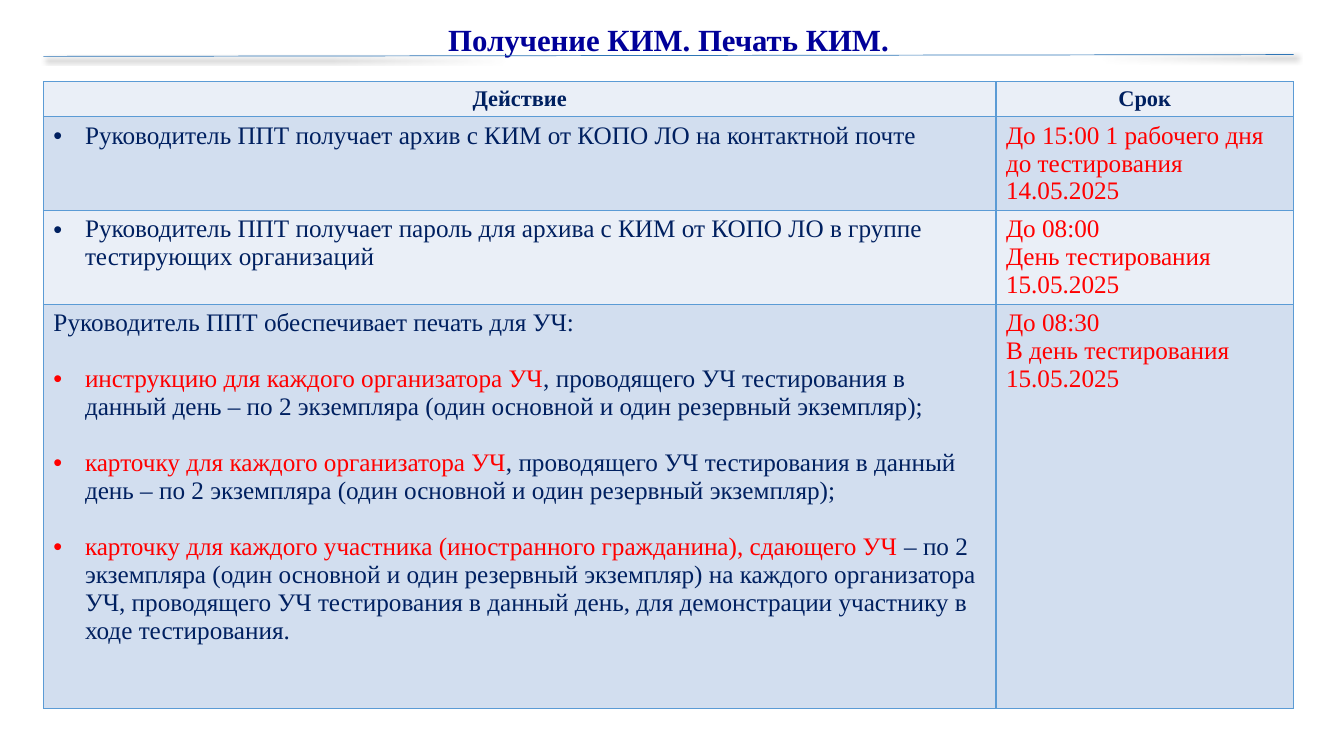
from lxml import etree
from pptx import Presentation
from pptx.dml.color import RGBColor
from pptx.enum.shapes import MSO_CONNECTOR
from pptx.enum.text import MSO_ANCHOR, MSO_AUTO_SIZE, PP_ALIGN
from pptx.oxml import parse_xml
from pptx.oxml.ns import nsdecls, qn
from pptx.util import Pt

CENTER, LEFT_ALIGN = PP_ALIGN.CENTER, PP_ALIGN.LEFT
TOP, MIDDLE, BOTTOM = MSO_ANCHOR.TOP, MSO_ANCHOR.MIDDLE, MSO_ANCHOR.BOTTOM
STRAIGHT, NO_AUTOFIT = MSO_CONNECTOR.STRAIGHT, MSO_AUTO_SIZE.NONE

FONT = "Times New Roman"
NAVY, RED, TITLE_BLUE = "002060", "FF0000", "000099"
BORDER, RULE = "5B9BD5", "2E75B6"
BANDS = ["EAEFF7", "D2DEEF"]

TITLE = "Получение КИМ. Печать КИМ."
HEADERS = ["Действие", "Срок"]
COPIES = (", проводящего УЧ тестирования в данный день – по 2 экземпляра "
          "(один основной и один резервный экземпляр);")
# Each paragraph: (bulleted, space before, [(text, colour), ...])
ACTIONS = [
    [(True, 0, [("Руководитель ППТ получает архив с КИМ от КОПО ЛО на контактной почте", NAVY)])],
    [(True, 0, [("Руководитель ППТ получает пароль для архива с КИМ от КОПО ЛО "
                 "в группе тестирующих организаций", NAVY)])],
    [(False, 0, [("Руководитель ППТ обеспечивает печать для УЧ:", NAVY)]),
     (True, 20, [("инструкцию для каждого организатора УЧ", RED), (COPIES, NAVY)]),
     (True, 20, [("карточку для каждого организатора УЧ", RED), (COPIES, NAVY)]),
     (True, 20, [("карточку для каждого участника (иностранного гражданина), сдающего УЧ ", RED),
                 ("– по 2 экземпляра (один основной и один резервный экземпляр) на каждого "
                  "организатора УЧ, проводящего УЧ тестирования в данный день, для "
                  "демонстрации участнику в ходе тестирования.", NAVY)])],
]
DEADLINES = [
    ["До 15:00 1 рабочего дня до тестирования", "14.05.2025"],
    ["До 08:00", "День тестирования", "15.05.2025"],
    ["До 08:30", "В день тестирования", "15.05.2025"],
]

LEFT, WIDTH = 31, 893
TABLE_TOP = 58.3
COLUMN_WIDTHS = [680.4, 212.6]
ROW_HEIGHTS = [25, 67, 67, 289]
INDENT = 22.5


def rgb(value):
    return RGBColor.from_string(value)


def style_run(r, size, color, bold=False):
    r.font.name, r.font.size, r.font.bold = FONT, Pt(size), bold
    r.font.color.rgb = rgb(color)


def add_bullet(p):
    pPr = p._p.get_or_add_pPr()
    pPr.set("marL", str(Pt(INDENT)))
    pPr.set("indent", str(-Pt(INDENT)))
    etree.SubElement(pPr, qn("a:buFont")).set("typeface", "Arial")
    etree.SubElement(pPr, qn("a:buChar")).set("char", "•")


def format_cell(cell, fill, anchor):
    """Set the borders, then the fill, which must follow them in the XML."""
    tcPr = cell._tc.get_or_add_tcPr()
    for side in ("lnL", "lnR", "lnT", "lnB"):
        tcPr.append(parse_xml(
            f'<a:{side} {nsdecls("a")} w="{Pt(1)}"><a:solidFill>'
            f'<a:srgbClr val="{BORDER}"/></a:solidFill></a:{side}>'))
    cell.fill.solid()
    cell.fill.fore_color.rgb = rgb(fill)
    cell.vertical_anchor = anchor


def fill_cell(cell, paragraphs, size, align=LEFT_ALIGN, bold=False):
    tf = cell.text_frame
    for i, (bulleted, before, runs) in enumerate(paragraphs):
        p = tf.add_paragraph() if i else tf.paragraphs[0]
        p.alignment = align
        p.space_before = Pt(before)
        if bulleted:
            add_bullet(p)
        for text, color in runs:
            r = p.add_run()
            r.text = text
            style_run(r, size, color, bold)


def add_title(s):
    title = s.shapes.title
    title.left, title.top, title.width, title.height = Pt(LEFT), Pt(0), Pt(WIDTH), Pt(45)
    tf = title.text_frame
    tf.text = TITLE
    tf.auto_size, tf.word_wrap, tf.vertical_anchor = NO_AUTOFIT, True, BOTTOM
    p = tf.paragraphs[0]
    p.alignment, p.line_spacing = CENTER, 0.9
    style_run(p.runs[0], 22, TITLE_BLUE, True)


def add_table(s):
    table = s.shapes.add_table(len(ROW_HEIGHTS), len(COLUMN_WIDTHS), Pt(LEFT), Pt(TABLE_TOP),
                               Pt(WIDTH), Pt(sum(ROW_HEIGHTS))).table
    table.first_row = table.horz_banding = False
    for column, width in zip(table.columns, COLUMN_WIDTHS):
        column.width = Pt(width)
    for i, height in enumerate(ROW_HEIGHTS):
        table.rows[i].height = Pt(height)
        for cell in table.rows[i].cells:
            format_cell(cell, BANDS[i % 2], TOP if i else MIDDLE)
    for j, header in enumerate(HEADERS):
        fill_cell(table.cell(0, j), [(False, 0, [(header, NAVY)])], 16, CENTER, True)
    for i, (action, deadline) in enumerate(zip(ACTIONS, DEADLINES), 1):
        fill_cell(table.cell(i, 0), action, 18)
        fill_cell(table.cell(i, 1), [(False, 0, [(line, RED)]) for line in deadline], 18)


def add_rule(s):
    rule = s.shapes.add_connector(STRAIGHT, Pt(LEFT), Pt(40.3), Pt(LEFT + WIDTH), Pt(39))
    rule.line.color.rgb = rgb(RULE)
    rule.line.width = Pt(0.5)
    rule._element.spPr.append(parse_xml(
        f'<a:effectLst {nsdecls("a")}><a:outerShdw blurRad="{Pt(4)}" dist="{Pt(3)}" '
        'dir="2700000" algn="tl" rotWithShape="0"><a:srgbClr val="000000">'
        '<a:alpha val="40000"/></a:srgbClr></a:outerShdw></a:effectLst>'))


def main():
    prs = Presentation()
    prs.slide_width, prs.slide_height = Pt(960), Pt(540)
    s = prs.slides.add_slide(prs.slide_layouts[5])
    add_title(s)
    add_table(s)
    add_rule(s)
    prs.save("out.pptx")


if __name__ == "__main__":
    main()
